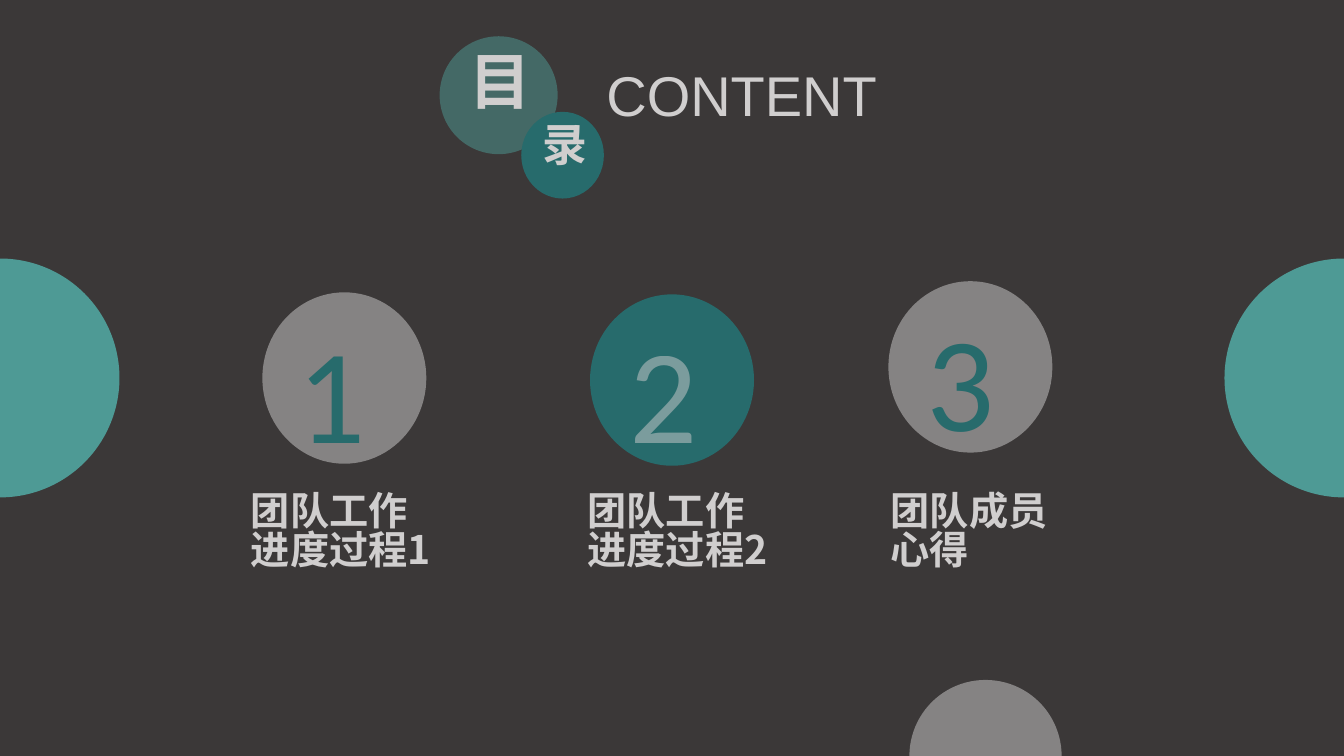
from dataclasses import dataclass

from lxml.etree import SubElement
from pptx import Presentation
from pptx.dml.color import RGBColor as RGB
from pptx.enum.shapes import MSO_SHAPE as SHAPE
from pptx.enum.text import MSO_ANCHOR as ANCHOR, MSO_AUTO_SIZE as AUTO, PP_ALIGN as ALIGN
from pptx.oxml.ns import qn
from pptx.util import Inches, Pt


@dataclass(frozen=True)
class Theme:
    back: str = "3B3838"
    teal: str = "4E9A95"
    deep: str = "276B6C"
    pale: str = "D0CECE"
    cjk: str = "Noto Sans CJK JP"
    number: int = 96
    big: int = 44
    title: int = 40
    small: int = 32
    label: int = 28
    cjk_spacing: float = 0.83


T = Theme()
prs = Presentation()
prs.slide_width, prs.slide_height = Inches(13.33), Inches(7.5)
slide = prs.slides.add_slide(prs.slide_layouts[5])
slide.background.fill.solid()
slide.background.fill.fore_color.rgb = RGB.from_string(T.back)


def paint(fill, color, alpha=100):
    """Fill with a solid colour; alpha is opacity in percent."""
    fill.solid()
    fill.fore_color.rgb = RGB.from_string(color)
    if alpha < 100:
        clr = next(fill._xPr.iter(qn("a:srgbClr")))
        SubElement(clr, qn("a:alpha"), val=str(alpha * 1000))


def add(cx, cy, w, h, text=None, sp=None, color=T.pale, alpha=100,
        size=T.label, font=T.cjk, bold=True, align=ALIGN.LEFT):
    """Add a circle, or a text box if text is given, centred at shares (%) of the slide."""
    W, H = prs.slide_width / 100, prs.slide_height / 100
    box = [int(v) for v in ((cx - w / 2) * W, (cy - h / 2) * H, w * W, h * H)]
    if text is None:
        sp = slide.shapes.add_shape(SHAPE.OVAL, *box)
        sp.shadow.inherit = False
        sp.line.fill.background()
        paint(sp.fill, color, alpha)
        return
    sp = sp or slide.shapes.add_textbox(*box)
    sp.left, sp.top, sp.width, sp.height = box
    tf = sp.text_frame
    tf.word_wrap = True
    tf.auto_size = AUTO.SHAPE_TO_FIT_TEXT
    tf.vertical_anchor = ANCHOR.TOP
    p = tf.paragraphs[0]
    p.alignment = align
    r = p.add_run()
    r.text = text
    r.font.name, r.font.size, r.font.bold = font, Pt(size), bold
    paint(r.font.fill, color, alpha)
    if font == T.cjk:
        p.line_spacing = T.cjk_spacing
        SubElement(r.font._element, qn("a:ea"), typeface=font)


# Half circles at the left and right edges
for edge in (0, 100):
    add(edge, 50, 17.78, 31.6, color=T.teal)

# Numbered items: circle, number and label centres
pale_disc, deep_disc = (T.pale, 50), (T.deep, 100)
items = [
    ("团队工作进度过程1", (25.62, 50), (25.36, 51.73), 25.66, pale_disc, deep_disc),
    ("团队工作进度过程2", (50, 50.27), (50.04, 51.73), 50.71, deep_disc, pale_disc),
    ("团队成员心得", (72.2, 48.53), (72.17, 50.13), 73.26, pale_disc, deep_disc),
]
for n, (label, disc, digit, label_x, disc_ink, digit_ink) in enumerate(items, 1):
    add(*disc, 12.2, 22.67, color=disc_ink[0], alpha=disc_ink[1])
    add(*digit, 7.95, 22.93, str(n), color=digit_ink[0], alpha=digit_ink[1],
        size=T.number, font="Calibri", bold=False)
    add(label_x, 71.6, 15.45, 13.87, label)

# Heading
add(37.1, 12.6, 8.78, 15.6, color=T.teal, alpha=50)
add(37.1, 12.27, 5.78, 11.2, "目", size=T.big, align=ALIGN.CENTER)
add(41.86, 20.53, 6.15, 11.47, color=T.deep)
add(41.9, 20.27, 4.58, 8.53, "录", size=T.small, align=ALIGN.CENTER)
add(55.18, 12.47, 24.38, 10.27, "CONTENT", sp=slide.shapes.title,
    size=T.title, font="Arial", bold=False, align=ALIGN.CENTER)

# Half circle at the bottom edge
add(73.33, 100, 11.33, 20.13, alpha=50)

prs.save("out.pptx")
